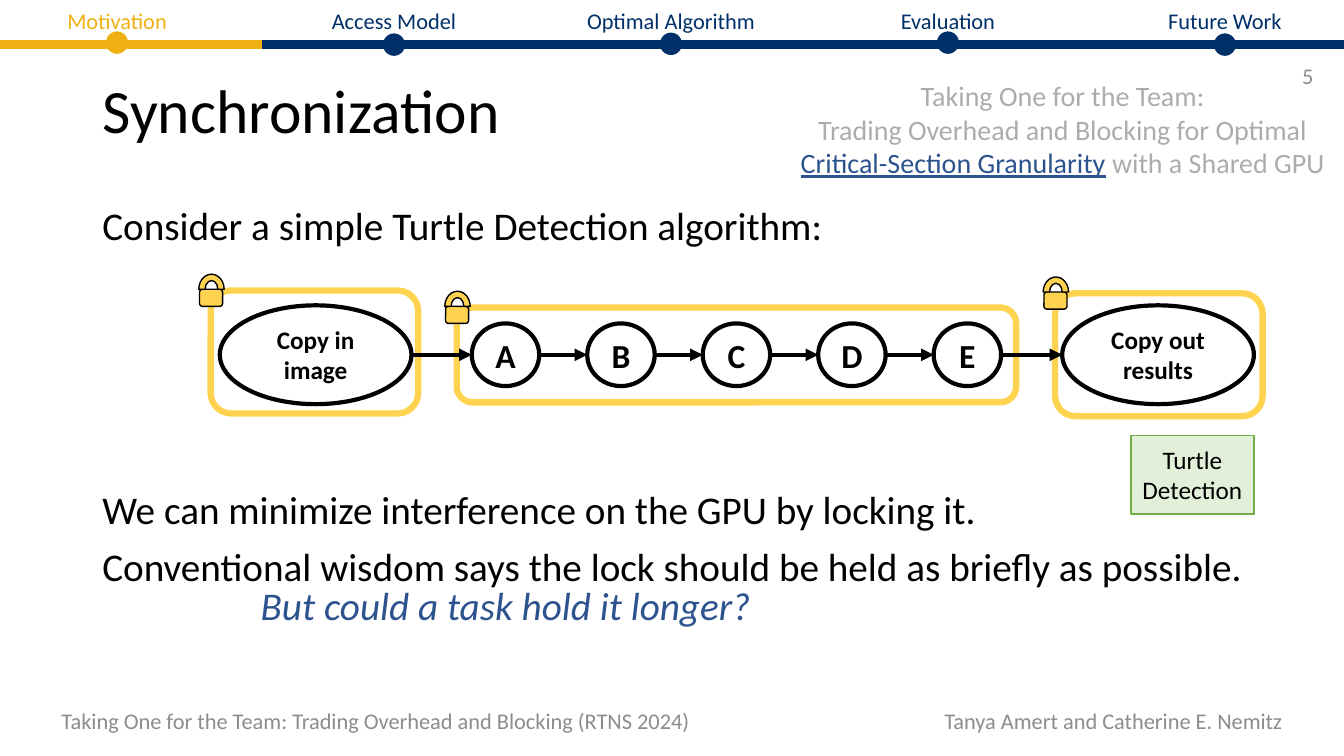
"""Build the Synchronization slide with its locked task graph and progress bar."""
from itertools import pairwise

from lxml import etree
from pptx import Presentation
from pptx.dml.color import RGBColor
from pptx.enum import shapes, text
from pptx.oxml.ns import qn
from pptx.util import Cm, Pt

BLACK = RGBColor(0x00, 0x00, 0x00)
GREY = RGBColor(0x8C, 0x8C, 0x8C)
PALE_GREY = RGBColor(0xAF, 0xAB, 0xAB)
BLUE = RGBColor(0x2D, 0x53, 0x8F)
NAVY = RGBColor(0x00, 0x30, 0x69)
GOLD = RGBColor(0xEE, 0xB1, 0x11)
LOCK_YELLOW = RGBColor(0xFF, 0xD2, 0x4F)
GREEN = RGBColor(0x70, 0xAD, 0x47)
PALE_GREEN = RGBColor(0xE2, 0xF0, 0xD9)

SHAPE = shapes.MSO_SHAPE
ALIGN = text.PP_ALIGN
ANCHOR = text.MSO_ANCHOR

BAR_Y = 1.12
NODE_Y = 8.94
SECTIONS = [("Motivation", 0.81), ("Access Model", 0.86), ("Optimal Algorithm", 0.84),
            ("Evaluation", 0.81), ("Future Work", 0.86)]
LOCKED_FRAMES = [(5.31, 7.32, 5.23, 3.1), (26.59, 7.39, 5.23, 3.1), (11.51, 7.75, 14.1, 2.39)]


def add_run(p, words, size, color, **fmt):
    r = p.add_run()
    r.text = words
    for key, value in {"name": "Calibri", "size": Pt(size), **fmt}.items():
        setattr(r.font, key, value)
    r.font.color.rgb = color


def set_paragraph(p, words, size, color, spacing=None, **fmt):
    for key, value in (spacing or {}).items():
        setattr(p, key, value)
    add_run(p, words, size, color, **fmt)


def add_text(s, box, anchor=ANCHOR.MIDDLE):
    tf = s.shapes.add_textbox(*map(Cm, box)).text_frame
    tf.word_wrap = True
    tf.vertical_anchor = anchor
    return tf


def add_label(s, box, words, size, color, align=ALIGN.LEFT, anchor=ANCHOR.MIDDLE, **fmt):
    tf = add_text(s, box, anchor)
    set_paragraph(tf.paragraphs[0], words, size, color, {"alignment": align}, **fmt)


def add_shape(s, kind, box, line, width, fill=None):
    sp = s.shapes.add_shape(kind, *map(Cm, box))
    sp.shadow.inherit = False
    if fill is None:
        sp.fill.background()
    else:
        sp.fill.solid()
        sp.fill.fore_color.rgb = fill
    sp.line.color.rgb = line
    sp.line.width = Pt(width)
    return sp


def fill_shape(sp, words, size, **fmt):
    tf = sp.text_frame
    tf.word_wrap = True
    tf.vertical_anchor = ANCHOR.MIDDLE
    set_paragraph(tf.paragraphs[0], words, size, BLACK, {"alignment": ALIGN.CENTER}, **fmt)


def add_line(s, x1, x2, y, color, width, arrow=False):
    cn = s.shapes.add_connector(shapes.MSO_CONNECTOR.STRAIGHT, x1, y, x2, y)
    cn.line.color.rgb = color
    cn.line.width = Pt(width)
    spPr = cn._element.spPr
    if arrow:
        etree.SubElement(spPr.find(qn("a:ln")), qn("a:tailEnd"), type="triangle")
    etree.SubElement(spPr, qn("a:effectLst"))


def add_node(s, left, width, height, words, size):
    sp = add_shape(s, SHAPE.OVAL, (left, NODE_Y - height / 2, width, height), BLACK, 3)
    fill_shape(sp, words, size, bold=True)
    return sp


def add_task_graph(s):
    nodes = [add_node(s, 5.54, 4.83, 2.49, "Copy in image", 18)]
    nodes += [add_node(s, 11.89 + 2.91 * i, 1.7, 1.58, name, 24) for i, name in enumerate("ABCDE")]
    nodes.append(add_node(s, 26.77, 4.83, 2.49, "Copy out results", 18))
    for before, after in pairwise(nodes):
        add_line(s, before.left + before.width, after.left, Cm(NODE_Y), BLACK, 3, arrow=True)


def add_locked_frame(s, left, top, width, height):
    add_shape(s, SHAPE.ROUNDED_RECTANGLE, (left, top, width, height), LOCK_YELLOW, 4.5)
    add_shape(s, SHAPE.ROUNDED_RECTANGLE, (left - 0.28, top - 0.03, 0.58, 0.43),
              BLACK, 1, LOCK_YELLOW)
    add_shape(s, SHAPE.BLOCK_ARC, (left - 0.3, top - 0.41, 0.64, 0.76), BLACK, 1, LOCK_YELLOW)


def add_progress_bar(s):
    add_line(s, 0, Cm(33.87), Cm(BAR_Y), NAVY, 6)
    add_line(s, 0, Cm(6.6), Cm(BAR_Y), GOLD, 6)
    for i, (name, dot_top) in enumerate(SECTIONS):
        color = NAVY if i else GOLD
        center = 2.95 + 6.98 * i
        add_label(s, (center - 2.7, 0.05, 5.4, 0.94), name, 16, color, ALIGN.CENTER, ANCHOR.TOP)
        add_shape(s, SHAPE.OVAL, (center - 0.26, dot_top, 0.52, 0.53), color, 1, color)


def set_title(s, words):
    title = s.shapes.title
    for key, value in {"left": 2.33, "top": 1.02, "width": 29.21, "height": 3.68}.items():
        setattr(title, key, Cm(value))
    tf = title.text_frame
    tf.vertical_anchor = ANCHOR.MIDDLE
    set_paragraph(tf.paragraphs[0], words, 44, BLACK,
                  {"alignment": ALIGN.LEFT, "line_spacing": 0.9})


def add_body(s):
    tf = add_text(s, (2.33, 5.08, 29.21, 12.09), ANCHOR.TOP)
    lines = [("Consider a simple Turtle Detection algorithm:", 0),
             ("We can minimize interference on the GPU by locking it.", 173),
             ("Conventional wisdom says the lock should be held as briefly as possible.", 10)]
    for i, (words, before) in enumerate(lines):
        p = tf.add_paragraph() if i else tf.paragraphs[0]
        set_paragraph(p, words, 28, BLACK, {"line_spacing": 0.9, "space_before": Pt(before)})


def add_talk_title(s):
    p = add_text(s, (19.86, 1.68, 13.84, 3.15)).paragraphs[0]
    p.alignment = ALIGN.CENTER
    for words in ("Taking One for the Team:", "Trading Overhead and Blocking for Optimal"):
        add_run(p, words, 20, PALE_GREY)
        p.add_line_break()
    add_run(p, "Critical-Section Granularity", 20, BLUE, underline=True)
    add_run(p, " with a Shared GPU", 20, PALE_GREY)


def main():
    prs = Presentation()
    prs.slide_width, prs.slide_height = Cm(33.87), Cm(19.05)
    s = prs.slides.add_slide(prs.slide_layouts[5])
    set_title(s, "Synchronization")
    add_body(s)
    add_label(s, (1.3, 17.65, 16.76, 1.02),
              "Taking One for the Team: Trading Overhead and Blocking (RTNS 2024)", 16, GREY)
    add_label(s, (22.94, 17.65, 9.63, 1.02), "Tanya Amert and Catherine E. Nemitz",
              16, GREY, ALIGN.RIGHT)
    add_label(s, (25.73, 1.4, 7.62, 1.02), "5", 16, GREY, ALIGN.RIGHT)
    add_talk_title(s)
    for frame in LOCKED_FRAMES:
        add_locked_frame(s, *frame)
    add_task_graph(s)
    add_label(s, (6.32, 14.53, 13.03, 1.45), "But could a task hold it longer?", 28, BLUE,
              anchor=ANCHOR.TOP, italic=True)
    detection = add_shape(s, SHAPE.RECTANGLE, (28.5, 10.97, 3.1, 1.98), GREEN, 1, PALE_GREEN)
    fill_shape(detection, "Turtle Detection", 18)
    add_progress_bar(s)
    prs.save("out.pptx")


if __name__ == "__main__":
    main()
